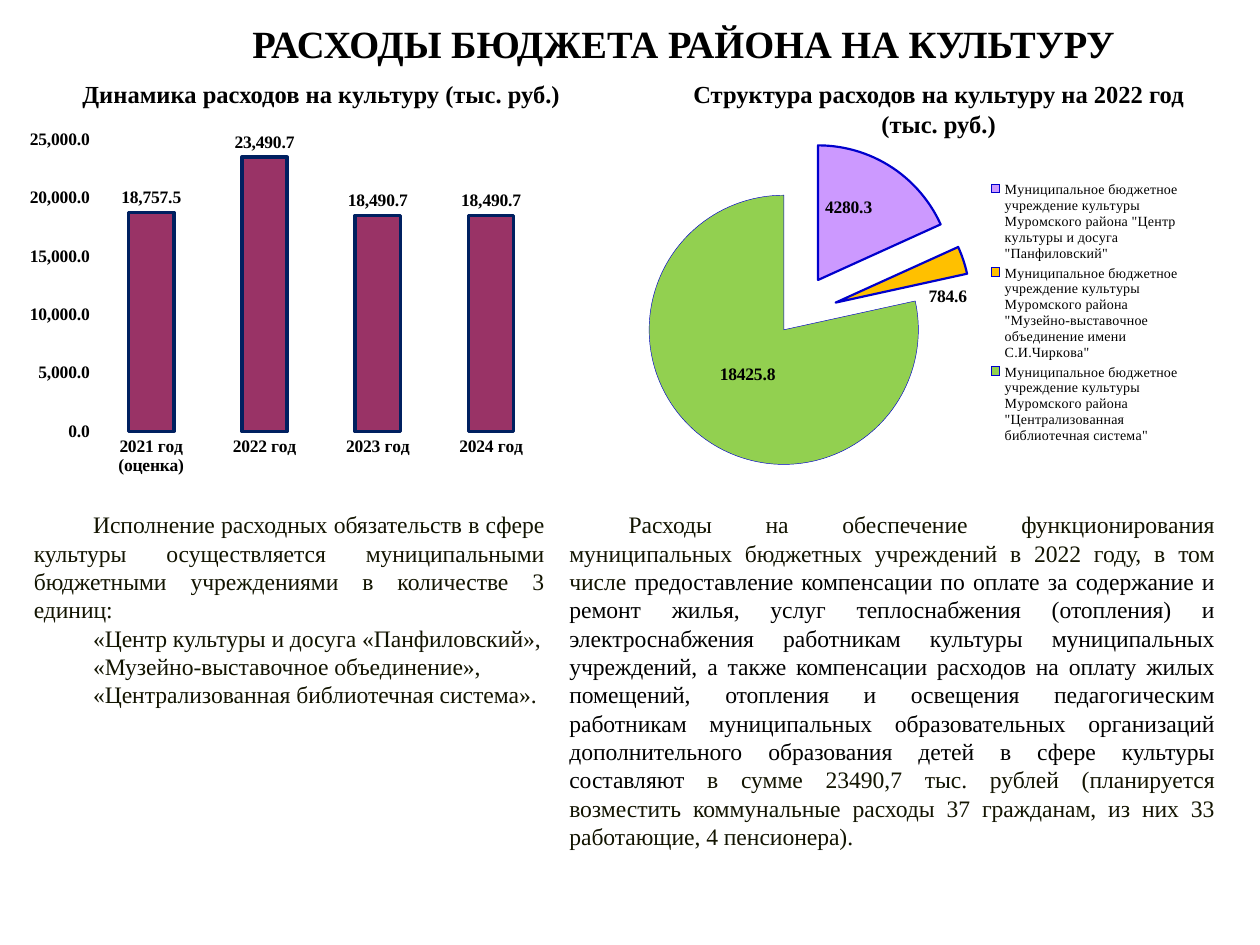
from lxml import etree
from pptx import Presentation
from pptx.chart.data import CategoryChartData
from pptx.dml.color import RGBColor
from pptx.enum.chart import (XL_CHART_TYPE, XL_LABEL_POSITION,
                             XL_LEGEND_POSITION, XL_TICK_MARK)
from pptx.enum.text import MSO_AUTO_SIZE, PP_ALIGN
from pptx.oxml.ns import qn
from pptx.util import Inches, Pt

FONT = "Times New Roman"
BLACK = RGBColor(0x00, 0x00, 0x00)
WHITE = RGBColor(0xFF, 0xFF, 0xFF)
OLIVE = RGBColor(0x12, 0x14, 0x00)
PLUM = RGBColor(0x99, 0x33, 0x66)
NAVY = RGBColor(0x00, 0x20, 0x60)
LILAC = RGBColor(0xCC, 0x99, 0xFF)
AMBER = RGBColor(0xFF, 0xC0, 0x00)
GREEN = RGBColor(0x92, 0xD0, 0x50)
BLUE = RGBColor(0x00, 0x00, 0xCC)

prs = Presentation()
prs.slide_width, prs.slide_height = Inches(10), Inches(7.5)
s = prs.slides.add_slide(prs.slide_layouts[6])


def add_text(box, paragraphs, size, align, bold=False, indent=0):
    """Add a text box; each paragraph is a list of (text, colour) runs."""
    sp = s.shapes.add_textbox(*[Inches(v) for v in box])
    tf = sp.text_frame
    tf.word_wrap = True
    tf.auto_size = MSO_AUTO_SIZE.SHAPE_TO_FIT_TEXT
    for i, runs in enumerate(paragraphs):
        p = tf.paragraphs[0] if i == 0 else tf.add_paragraph()
        p.alignment = align
        if indent:
            pPr = p._p.get_or_add_pPr()
            pPr.set("marL", "0")
            pPr.set("indent", str(Inches(indent)))
        for text, color in runs:
            r = p.add_run()
            r.text = text
            r.font.name, r.font.size, r.font.bold = FONT, Pt(size), bold
            r.font.color.rgb = color


def set_layout(parent, index, **values):
    """Insert a manual chart layout at the given child index."""
    layout = etree.Element(qn("c:layout"))
    manual = etree.SubElement(layout, qn("c:manualLayout"))
    for tag, value in values.items():
        etree.SubElement(manual, qn("c:" + tag)).set("val", str(value))
    for old in parent.findall(qn("c:layout")):
        parent.remove(old)
    parent.insert(index, layout)


# Headings
for box, text, size in [
    ((1.33, 0.11, 8.19, 0.47), "РАСХОДЫ БЮДЖЕТА РАЙОНА НА КУЛЬТУРУ", 22),
    ((0.26, 0.58, 4.58, 0.33), "Динамика расходов на культуру (тыс. руб.)", 14),
    ((5.16, 0.58, 4.58, 0.57),
     "Структура расходов на культуру на 2022 год (тыс. руб.)", 14),
]:
    add_text(box, [[(text, BLACK)]], size, PP_ALIGN.CENTER, bold=True)

# Body text
institutions = [
    "Исполнение расходных обязательств в сфере культуры осуществляется "
    "муниципальными бюджетными учреждениями в количестве 3 единиц:",
    "«Центр культуры и досуга «Панфиловский»,",
    "«Музейно-выставочное объединение»,",
    "«Централизованная библиотечная система».",
]
add_text((0.17, 4, 4.25, 1.75), [[(t, OLIVE)] for t in institutions],
         13.5, PP_ALIGN.JUSTIFY, indent=0.47)
spending = [
    ("Расходы на обеспечение функционирования муниципальных бюджетных "
     "учреждений в 2022 году, в том числе ", OLIVE),
    ("предоставление компенсации по оплате за содержание и ремонт жилья, услуг "
     "теплоснабжения (отопления) и электроснабжения работникам культуры "
     "муниципальных учреждений, а также компенсации расходов на оплату жилых "
     "помещений, отопления и освещения педагогическим работникам муниципальных "
     "образовательных организаций дополнительного образования детей в сфере "
     "культуры составляют ", BLACK),
    ("в сумме 23490,7 тыс. рублей (планируется возместить коммунальные расходы "
     "37 гражданам, из них 33 работающие, 4 пенсионера).", OLIVE),
]
add_text((4.42, 4, 5.32, 2.83), [spending], 13.5, PP_ALIGN.JUSTIFY, indent=0.47)

# Chart data
yearly = CategoryChartData()
yearly.categories = ["2021 год (оценка)", "2022 год", "2023 год", "2024 год"]
yearly.add_series("Расходы", (18757.5, 23490.7, 18490.7, 18490.7))
structure = CategoryChartData()
structure.categories = [
    "Муниципальное бюджетное учреждение культуры Муромского района " + name
    for name in ('"Центр культуры и досуга "Панфиловский"',
                 '"Музейно-выставочное объединение имени С.И.Чиркова"',
                 '"Централизованная библиотечная система"')
]
structure.add_series("Расходы", (4280.3, 784.6, 18425.8))

# Both charts: fonts, value labels and plot position
charts = []
for kind, box, data, plot_box in [
    (XL_CHART_TYPE.COLUMN_CLUSTERED, (0.14, 0.94, 4.36, 3.06), yearly,
     (0.14, 0.055, 0.825, 0.757)),
    (XL_CHART_TYPE.PIE, (4.73, 0.95, 4.79, 3.06), structure,
     (0.035, 0.02, 0.589, 0.98)),
]:
    chart = s.shapes.add_chart(kind, *[Inches(v) for v in box], data).chart
    chart.has_title = False
    chart.has_legend = False
    chart.font.name, chart.font.size = FONT, Pt(10)
    chart.font.color.rgb = BLACK
    plot = chart.plots[0]
    plot.vary_by_categories = kind == XL_CHART_TYPE.PIE
    plot.has_data_labels = True
    labels = plot.data_labels
    labels.show_value = True
    labels.font.name, labels.font.size, labels.font.bold = FONT, Pt(10), True
    labels.font.color.rgb = BLACK
    x, y, w, h = plot_box
    set_layout(chart._chartSpace.chart.plotArea, 0, layoutTarget="inner",
               xMode="edge", yMode="edge", x=x, y=y, w=w, h=h)
    charts.append(chart)
columns, pie = charts

# Column chart
plot = columns.plots[0]
plot.gap_width = 150
plot.data_labels.number_format = "#,##0.0"
plot.data_labels.number_format_is_linked = False
plot.data_labels.position = XL_LABEL_POSITION.OUTSIDE_END
bars = plot.series[0].format
bars.fill.solid()
bars.fill.fore_color.rgb = PLUM
bars.line.color.rgb, bars.line.width = NAVY, Pt(2)
for axis in (columns.category_axis, columns.value_axis):
    axis.major_tick_mark = axis.minor_tick_mark = XL_TICK_MARK.NONE
    font = axis.tick_labels.font
    font.name, font.size, font.bold = FONT, Pt(10), True
    font.color.rgb = BLACK
    axis.format.line.color.rgb, axis.format.line.width = WHITE, Pt(0.25)
axis = columns.value_axis
axis.minimum_scale, axis.maximum_scale, axis.major_unit = 0, 25000, 5000
axis.tick_labels.number_format = "#,##0.0"
axis.tick_labels.number_format_is_linked = False
grid = axis.major_gridlines.format.line
grid.color.rgb, grid.width = WHITE, Pt(0.25)

# Pie slices: fill, line width, explosion, label shift
slices = pie.plots[0].series[0]
for i, (color, width, explosion, dx, dy) in enumerate([
    (LILAC, 1.25, 32, -0.01, -0.04),
    (AMBER, 1.25, 32, 0.08, 0.04),
    (GREEN, 0.25, 13, 0.01, -0.02),
]):
    point = slices.points[i]
    point.format.fill.solid()
    point.format.fill.fore_color.rgb = color
    point.format.line.color.rgb, point.format.line.width = BLUE, Pt(width)
    dPt = point.format.fill._xPr.getparent()
    explode = etree.Element(qn("c:explosion"))
    explode.set("val", str(explosion))
    dPt.insert(1, explode)
    label = point.data_label
    label.font.name, label.font.size, label.font.bold = FONT, Pt(10), True
    label.font.color.rgb = BLACK
    label.position = XL_LABEL_POSITION.CENTER
    set_layout(label._dLbl, 1, x=dx, y=dy)

# The explosion of the whole series makes the pie shrink into its plot area
explode = etree.Element(qn("c:explosion"))
explode.set("val", "32")
slices._element.find(qn("c:dPt")).addprevious(explode)

# Pie legend
pie.has_legend = True
pie.legend.position = XL_LEGEND_POSITION.RIGHT
pie.legend.include_in_layout = False
pie.legend.font.name, pie.legend.font.size = FONT, Pt(8)
pie.legend.font.color.rgb = BLACK
set_layout(pie.legend._element, 1, xMode="edge", yMode="edge",
           x=0.64, y=0.15, w=0.34, h=0.7)

prs.save("out.pptx")
